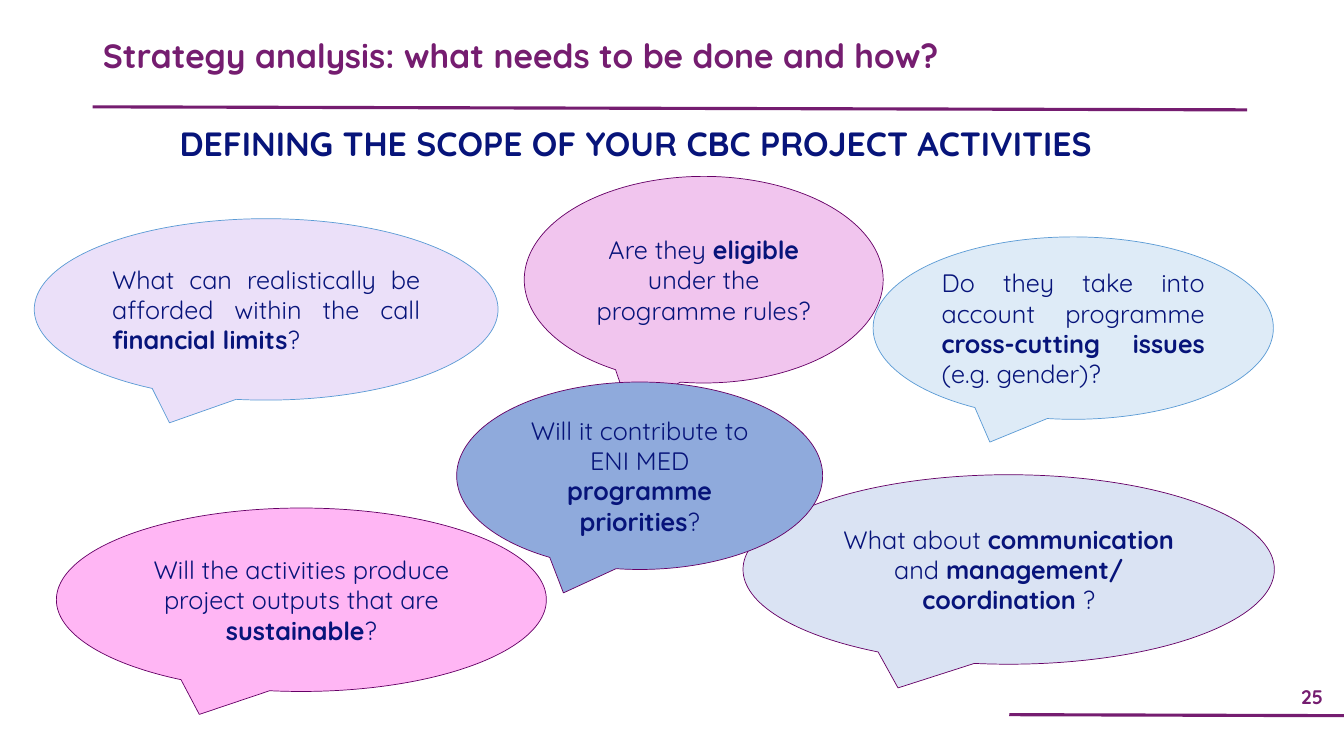
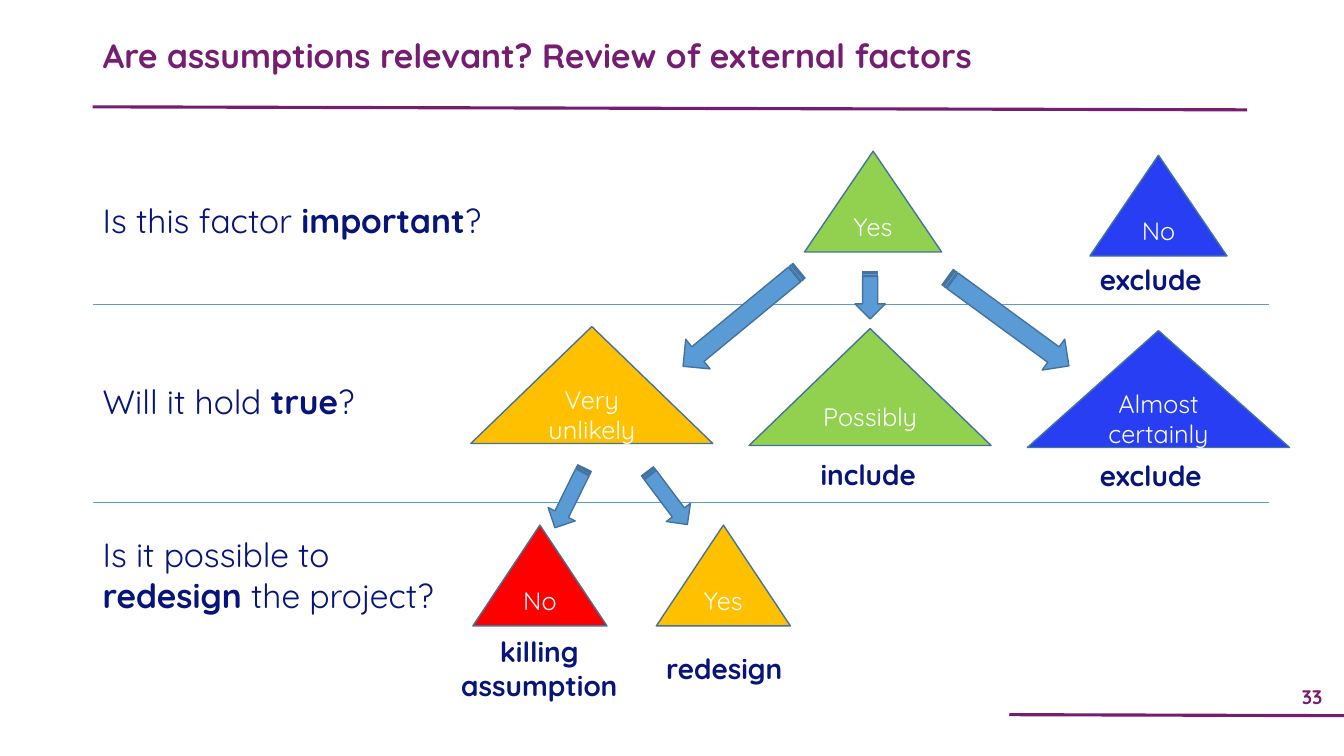
from lxml import etree
from pptx import Presentation
from pptx import util as u
from pptx.dml import color
from pptx.enum import shapes, text
from pptx.oxml import ns

FONT = "Quicksand"
PURPLE, NAVY, WHITE = "751D70", "07147A", "FFFFFF"
BLUE, STEEL, PLUM = "5B9BD5", "43739E", "660066"
GREEN, AMBER, RED, ROYAL = "92D050", "FFC000", "FF0000", "273EF3"
SHAPE = shapes.MSO_SHAPE
ALIGN = text.PP_ALIGN
ANCHOR = text.MSO_ANCHOR


def rgb(value):
    return color.RGBColor.from_string(value)


class Deck:
    """Holds the presentation style and the current slide."""

    def __init__(self):
        self.prs = Presentation()
        self.prs.slide_width = u.Inches(13.33)
        self.prs.slide_height = u.Inches(7.5)
        self.s = None

    def slide(self, title, number):
        self.s = self.prs.slides.add_slide(self.prs.slide_layouts[5])
        sp = self.s.shapes.title
        sp.left, sp.top, sp.width, sp.height = map(u.Inches, (0.92, 0.34, 9.73, 0.65))
        self.set_text(sp, title, 24, PURPLE, ALIGN.LEFT, ANCHOR.TOP, True, 0.9)
        # Title rule and page number with its rule
        self.line(0.92, 1.06, 12.37, 1.09, PURPLE, 2.25)
        self.label(12.7, 6.73, 0.63, 0.36, str(number), 14, PURPLE,
                   ALIGN.CENTER, ANCHOR.MIDDLE)
        self.line(10.01, 7.09, 13.33, 7.1, PURPLE, 2.25)

    def set_text(self, sp, words, size, ink, align, anchor, bold=False, spacing=None):
        """Fills in one paragraph; words between asterisks are bold."""
        tf = sp.text_frame
        tf.word_wrap = True
        tf.auto_size = text.MSO_AUTO_SIZE.NONE
        tf.vertical_anchor = anchor
        p = tf.paragraphs[0]
        p.alignment, p.line_spacing = align, spacing
        p.space_before = u.Pt(0)
        for i, part in enumerate(words.split("*")):
            r = p.add_run()
            r.text = part
            r.font.name, r.font.size = FONT, u.Pt(size)
            r.font.bold = bold or i % 2 == 1
            r.font.color.rgb = rgb(ink)

    def label(self, x, y, w, h, words, size=20, ink=NAVY, align=ALIGN.LEFT,
              anchor=ANCHOR.BOTTOM, bold=True, spacing=None):
        sp = self.s.shapes.add_textbox(*map(u.Inches, (x, y, w, h)))
        self.set_text(sp, words, size, ink, align, anchor, bold, spacing)

    def line(self, x1, y1, x2, y2, ink, width):
        sp = self.s.shapes.add_connector(
            shapes.MSO_CONNECTOR.STRAIGHT, *map(u.Inches, (x1, y1, x2, y2)))
        sp.line.color.rgb = rgb(ink)
        sp.line.width = u.Pt(width)
        etree.SubElement(sp._element.spPr, ns.qn("a:effectLst"))

    def shape(self, kind, x, y, w, h, fill, border, width):
        sp = self.s.shapes.add_shape(kind, *map(u.Inches, (x, y, w, h)))
        sp.shadow.inherit = False
        sp.fill.solid()
        sp.fill.fore_color.rgb = rgb(fill)
        sp.line.color.rgb = rgb(border)
        sp.line.width = u.Pt(width)
        return sp

    def bubble(self, x, y, w, h, fill, border, words, align=ALIGN.CENTER):
        sp = self.shape(SHAPE.OVAL_CALLOUT, x, y, w, h, fill, border, 0.5)
        self.set_text(sp, words, 18, NAVY, align, ANCHOR.MIDDLE)

    def triangle(self, x, y, w, h, fill, words):
        sp = self.shape(SHAPE.ISOSCELES_TRIANGLE, x, y, w, h, fill, STEEL, 1)
        self.set_text(sp, words, 18, WHITE, ALIGN.CENTER, ANCHOR.MIDDLE)

    def arrow(self, cx, cy, length, thickness, angle):
        """Arrow centred on a point; the angle runs clockwise from the right."""
        sp = self.shape(SHAPE.STRIPED_RIGHT_ARROW, cx - length / 2,
                        cy - thickness / 2, length, thickness, BLUE, STEEL, 1)
        sp.rotation = angle


def scope_slide(d):
    d.slide("Strategy analysis: what needs to be done and how?", 25)
    d.label(0.92, 1.22, 10.77, 0.6, "DEFINING THE SCOPE OF YOUR CBC PROJECT ACTIVITIES",
            24, NAVY, ALIGN.CENTER, ANCHOR.TOP, spacing=0.9)

    # Question bubbles, back to front
    d.bubble(8.66, 2.35, 3.97, 1.81, "DEEBF7", BLUE,
             "Do they take into account programme *cross-cutting issues *(e.g. gender)?",
             ALIGN.JUSTIFY)
    d.bubble(0.34, 2.17, 4.6, 1.8, "EBE0F9", BLUE,
             "What can realistically be afforded within the call *financial limits*?",
             ALIGN.JUSTIFY)
    for x, y, w, h, fill, words in (
        (0.56, 5.04, 4.86, 1.82, "FFB6F4",
         "Will the activities produce project outputs that are *sustainable*?"),
        (7.37, 4.71, 5.27, 1.88, "DAE3F3",
         "What about *communication* and *management/ coordination* ?"),
        (5.2, 1.75, 3.56, 2.05, "F1C5EE",
         "Are they *eligible* under the programme rules?"),
        (4.53, 3.79, 3.63, 1.86, "8FAADC",
         "Will it contribute to ENI MED* programme priorities*?"),
    ):
        d.bubble(x, y, w, h, fill, PLUM, words)


def assumptions_slide(d):
    d.slide("Are assumptions relevant? Review of external factors", 33)

    # Questions and the rules between them
    for y, w, h, words in (
        (1.93, 4.08, 0.5, "Is this factor *important*?"),
        (3.73, 4.08, 0.5, "Will it hold *true*?"),
        (5.24, 3.91, 0.91, "Is it possible to *redesign* the project?"),
    ):
        d.label(0.92, y, w, h, words, 24, bold=False)
    for y in (3.02, 4.98):
        d.line(0.92, y, 12.59, y, BLUE, 0.5)

    # Answers
    for x, y, w, h, fill, words in (
        (7.98, 1.5, 1.36, 1, GREEN, "Yes"),
        (10.81, 1.54, 1.36, 1, ROYAL, "No"),
        (4.67, 3.24, 2.4, 1.16, AMBER, "Very unlikely"),
        (7.43, 3.26, 2.4, 1.16, GREEN, "Possibly"),
        (10.19, 3.28, 2.6, 1.16, ROYAL, "Almost certainly"),
        (4.69, 5.21, 1.33, 1, RED, "No"),
        (6.51, 5.21, 1.33, 1, AMBER, "Yes"),
    ):
        d.triangle(x, y, w, h, fill, words)

    # Arrows from each answer to the next question
    for cx, cy, length, thickness, angle in (
        (7.35, 3.16, 1.49, 0.38, 140.5),
        (8.63, 2.93, 0.47, 0.3, 90),
        (10, 3.19, 1.49, 0.38, 36.2),
        (5.65, 4.94, 0.66, 0.3, 116.3),
        (6.62, 4.94, 0.66, 0.3, 53.1),
    ):
        d.arrow(cx, cy, length, thickness, angle)

    # Outcomes
    for x, y, w, words in (
        (10.81, 2.54, 1.36, "exclude"),
        (10.81, 4.48, 1.36, "exclude"),
        (8.04, 4.47, 1.36, "include"),
        (6.51, 6.4, 1.53, "redesign"),
    ):
        d.label(x, y, w, 0.45, words)
    d.label(4.43, 6.24, 1.84, 0.77, "killing assumption", align=ALIGN.CENTER)


def main():
    d = Deck()
    scope_slide(d)
    assumptions_slide(d)
    d.prs.save("out.pptx")


if __name__ == "__main__":
    main()
